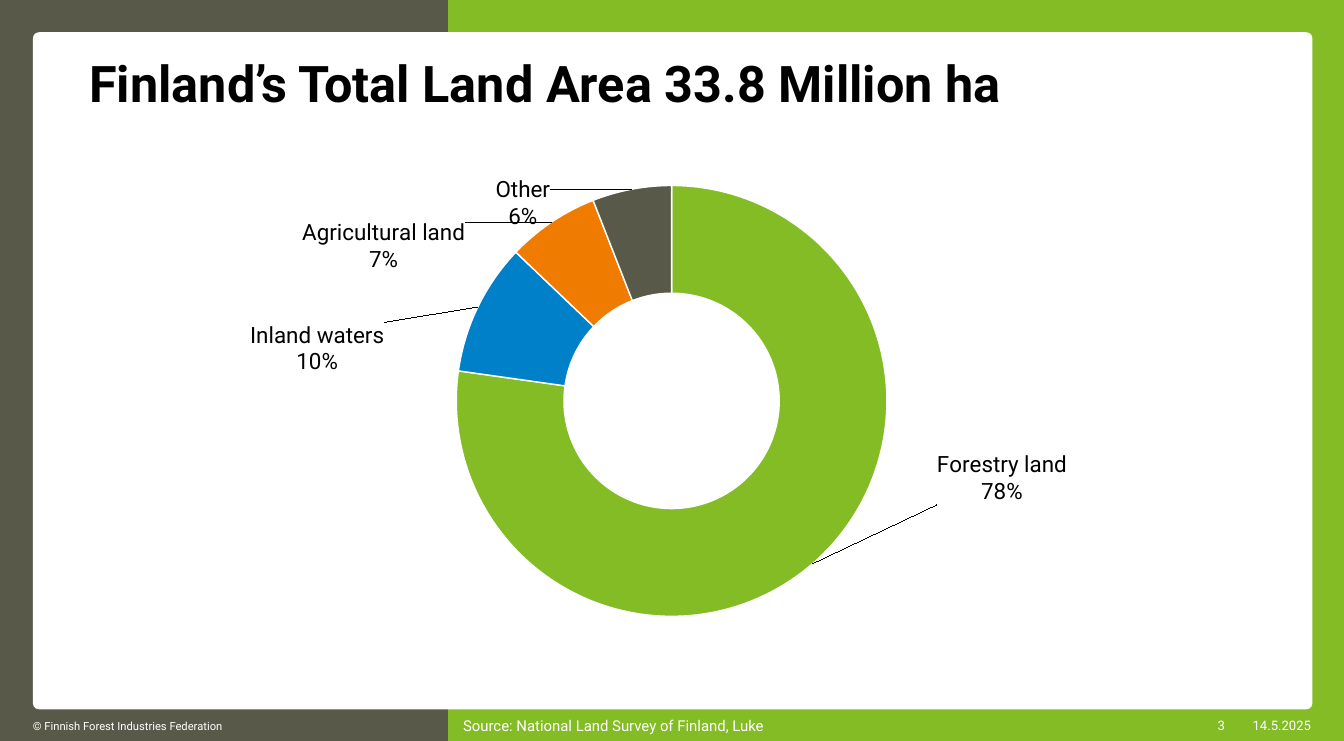
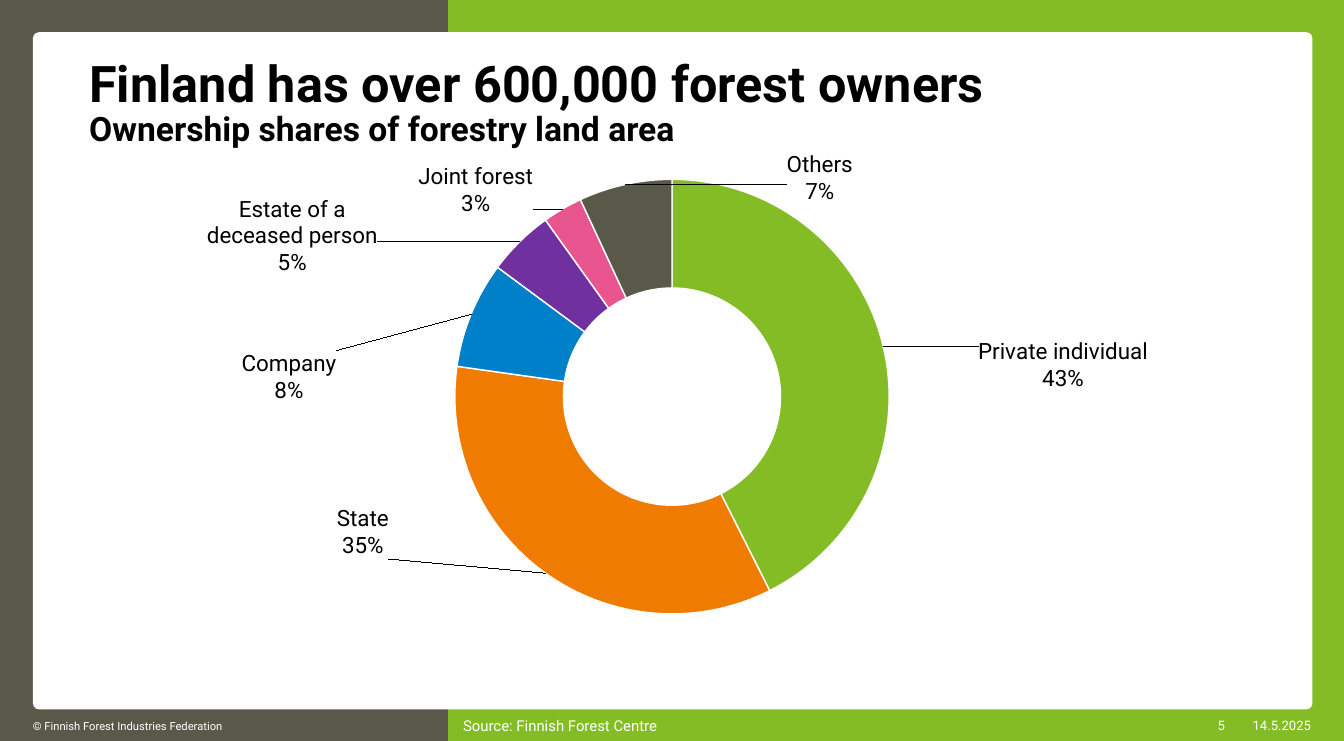
from math import cos, pi, sin

from lxml.etree import SubElement
from pptx import Presentation
from pptx.chart.data import CategoryChartData
from pptx.dml.color import RGBColor
from pptx.enum.chart import XL_CHART_TYPE
from pptx.enum.shapes import MSO_SHAPE
from pptx.enum.text import MSO_ANCHOR, PP_ALIGN
from pptx.oxml import parse_xml
from pptx.oxml.ns import nsdecls, qn
from pptx.util import Inches, Pt

FONT = "Roboto"
BLACK, WHITE = "000000", "FFFFFF"
GREEN, GREY, BLUE, ORANGE = "84BC26", "595949", "0080C8", "EF7C00"
PURPLE, PINK = "7030A0", "E8548D"
FOOTER_TOP, FOOTER_HEIGHT = 10.55, 0.48
TITLE_BOX = (1.23, 0.82, 17.53, 1.45)


def color(value):
    return RGBColor.from_string(value)


def style_font(font, size, value, bold=False):
    font.name = FONT
    font.size = Pt(size)
    font.bold = bold
    font.color.rgb = color(value)


def add_panel(page, box, fill, kind=MSO_SHAPE.RECTANGLE):
    panel = page.shapes.add_shape(kind, *map(Inches, box))
    panel.shadow.inherit = False
    panel.fill.solid()
    panel.fill.fore_color.rgb = color(fill)
    panel.line.fill.background()
    return panel


def add_frame(page):
    """Two colour bands with the white rounded content card on top."""
    add_panel(page, (0, 0, 6.67, 11.02), GREY)
    add_panel(page, (6.67, 0, 13.33, 11.02), GREEN)
    card = add_panel(page, (0.49, 0.48, 19.04, 10.07), WHITE,
                     MSO_SHAPE.ROUNDED_RECTANGLE)
    card.adjustments[0] = 0.009


def add_footer(page, source, number):
    items = [
        (0.49, 6.18, "© Finnish Forest Industries Federation", 12, PP_ALIGN.LEFT),
        (6.89, 6.22, source, 16, PP_ALIGN.LEFT),
        (17.69, 0.54, number, 14, PP_ALIGN.RIGHT),
        (18.42, 1.09, "14.5.2025", 14, PP_ALIGN.RIGHT),
    ]
    for left, width, text, size, align in items:
        box = page.shapes.add_textbox(Inches(left), Inches(FOOTER_TOP),
                                      Inches(width), Inches(FOOTER_HEIGHT))
        frame = box.text_frame
        frame.word_wrap = True
        frame.vertical_anchor = MSO_ANCHOR.MIDDLE
        frame.margin_left = frame.margin_right = 0
        frame.margin_top = frame.margin_bottom = 0
        frame.text = text
        para = frame.paragraphs[0]
        para.alignment = align
        style_font(para.runs[0].font, size, WHITE)


def add_title(page, lines):
    frame = page.shapes.add_textbox(*map(Inches, TITLE_BOX)).text_frame
    frame.word_wrap = True
    frame.text = "\n".join(lines)
    for para, size in zip(frame.paragraphs, (54, 36)):
        para.line_spacing = 0.9
        style_font(para.runs[0].font, size, BLACK, bold=True)


def manual_layout(**values):
    parts = "".join(f'<c:{name} val="{value}"/>' for name, value in values.items())
    return parse_xml(f"<c:layout {nsdecls('c')}><c:manualLayout>{parts}"
                     "</c:manualLayout></c:layout>")


def set_plot_layout(chart, plot):
    area = chart._chartSpace.chart.plotArea
    for old in area.findall(qn("c:layout")):
        area.remove(old)
    left, top, width, height = plot
    area.insert(0, manual_layout(layoutTarget="inner", xMode="edge", yMode="edge",
                                 x=left, y=top, w=width, h=height))


def label_offsets(slices, box, plot):
    """Shift of each label from the middle of its ring segment, per chart size."""
    left, top, width, height = box
    center_x = left + (plot[0] + plot[2] / 2) * width
    center_y = top + (plot[1] + plot[3] / 2) * height
    middle = 0.75 * min(plot[2] * width, plot[3] * height) / 2
    total = sum(value for _, value, _, _ in slices)
    done = 0
    for _, value, _, (label_x, label_y) in slices:
        angle = 2 * pi * (done + value / 2) / total
        done += value
        yield (round((label_x - center_x - middle * sin(angle)) / width, 4),
               round((label_y - center_y + middle * cos(angle)) / height, 4))


def add_label_separator(element):
    separator = SubElement(element, qn("c:separator"))
    separator.text = "\n"
    element.find(qn("c:showBubbleSize")).addnext(separator)
    return separator


def add_doughnut(page, box, plot, hole, slices):
    data = CategoryChartData(number_format="0%")
    data.categories = [name for name, _, _, _ in slices]
    data.add_series("Series 1", [value for _, value, _, _ in slices])
    chart = page.shapes.add_chart(XL_CHART_TYPE.DOUGHNUT, *map(Inches, box), data).chart
    chart.has_legend = False
    chart.has_title = False
    style_font(chart.font, 10, GREY)
    set_plot_layout(chart, plot)
    ring = chart.plots[0]
    ring.vary_by_categories = True
    ring._element.find(qn("c:holeSize")).set("val", str(hole))

    series = ring.series[0]
    labels = series.data_labels
    labels.show_value = True
    labels.show_category_name = True
    labels.number_format = "0%"
    labels.number_format_is_linked = False
    style_font(labels.font, 24, BLACK)
    separator = add_label_separator(labels._element)
    leader = labels._element.find(qn("c:showLeaderLines"))
    if leader is None:
        leader = SubElement(labels._element, qn("c:showLeaderLines"))
        separator.addnext(leader)
    leader.set("val", "1")

    for index, (_, _, fill, _) in enumerate(slices):
        point = series.points[index]
        point.format.fill.solid()
        point.format.fill.fore_color.rgb = color(fill)
        point.format.line.color.rgb = color(WHITE)
        point.format.line.width = Pt(1.5)
        style_font(point.data_label.font, 24, BLACK)

    point_labels = labels._element.findall(qn("c:dLbl"))
    for label, (x, y) in zip(point_labels, label_offsets(slices, box, plot)):
        label.find(qn("c:idx")).addnext(manual_layout(x=x, y=y))
        label.find(qn("c:showCatName")).set("val", "1")
        add_label_separator(label)


def add_chart_page(deck, title, source, number, box, plot, hole, slices):
    page = deck.slides.add_slide(deck.slide_layouts[6])
    add_frame(page)
    add_footer(page, source, number)
    add_title(page, title)
    add_doughnut(page, box, plot, hole, slices)


# Each slice: name, share, colour, centre of its label on the page.
LAND_USE = [
    ("Forestry land", 0.78, GREEN, (14.91, 7.11)),
    ("Inland waters", 0.10, BLUE, (4.72, 5.19)),
    ("Agricultural land", 0.07, ORANGE, (5.71, 3.66)),
    ("Other", 0.06, GREY, (7.78, 3.02)),
]
OWNERS = [
    ("Private individual", 0.43, GREEN, (15.82, 5.43)),
    ("State", 0.35, ORANGE, (5.4, 7.92)),
    ("Company", 0.08, BLUE, (4.3, 5.61)),
    ("Estate of a deceased person", 0.05, PURPLE, (4.35, 3.51)),
    ("Joint forest", 0.03, PINK, (7.08, 2.83)),
    ("Others", 0.07, GREY, (12.2, 2.65)),
]


def main():
    deck = Presentation()
    deck.slide_width, deck.slide_height = Inches(20), Inches(11.02)
    add_chart_page(deck, ["Finland’s Total Land Area 33.8 Million ha"],
                   "Source: National Land Survey of Finland, Luke", "3",
                   (1.23, 2.26, 17.53, 7.34), (0.317, 0.068, 0.366, 0.873),
                   60, LAND_USE)
    add_chart_page(deck, ["Finland has over 600,000 forest owners",
                          "Ownership shares of forestry land area"],
                   "Source: Finnish Forest Centre", "5",
                   (1.23, 2.26, 17.42, 7.36), (0.318, 0.055, 0.371, 0.879),
                   50, OWNERS)
    deck.save("out.pptx")


if __name__ == "__main__":
    main()
